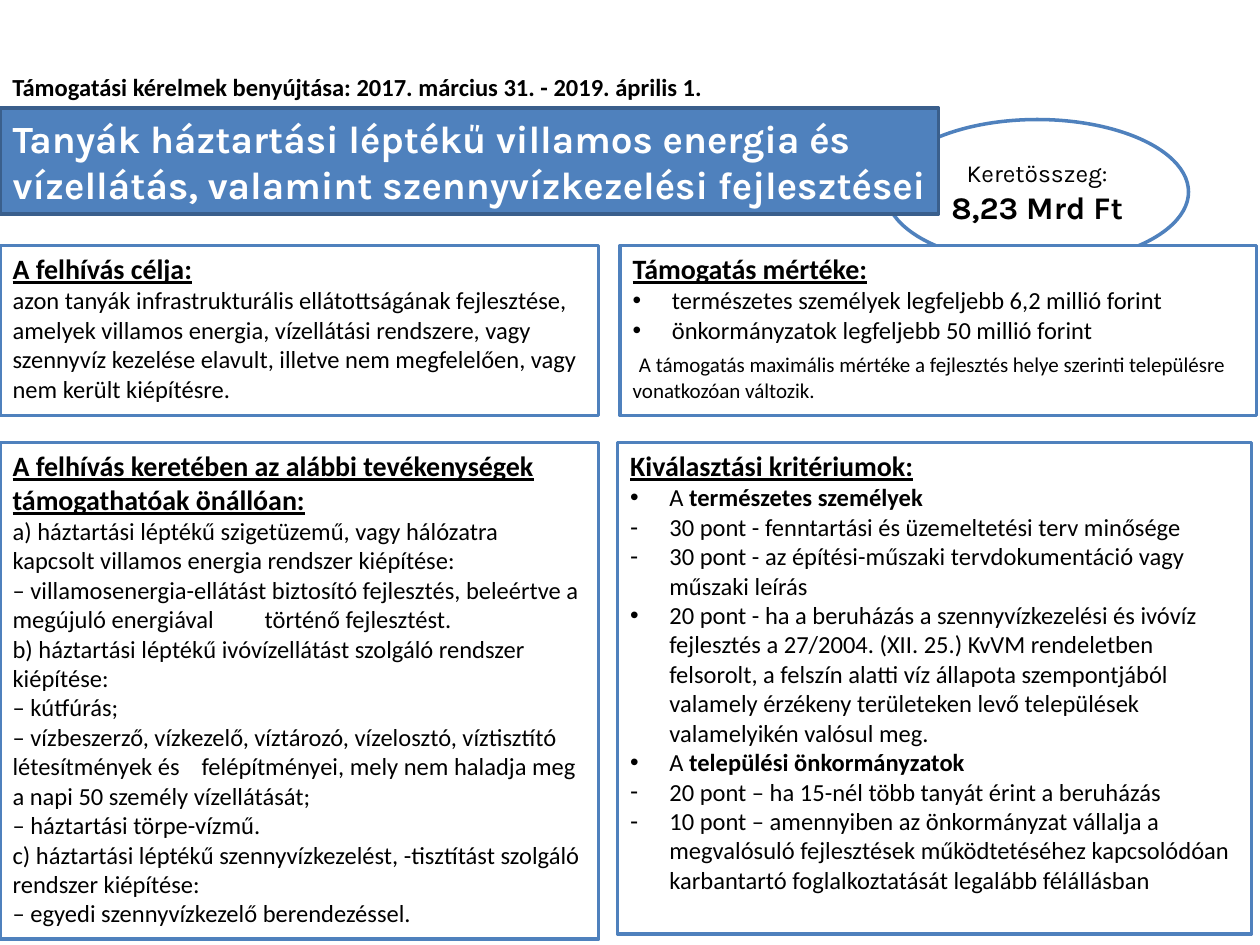
import pptx
import pptx.util
import pptx.dml.color
import pptx.enum.shapes
import pptx.enum.text
import lxml.etree

Cm, Pt = pptx.util.Cm, pptx.util.Pt
Align = pptx.enum.text.PP_ALIGN
Anchor = pptx.enum.text.MSO_ANCHOR
hues = {"blue": "4F81BD", "navy": "3A5F8C", "white": "FFFFFF", "black": "000000"}


def style(run, size, bold=False, face="Calibri", hue="black", under=False):
    font = run.font
    font.size, font.bold, font.name, font.underline = Pt(size), bold, face, under
    font.color.rgb = pptx.dml.color.RGBColor.from_string(hues[hue])


def frame(shape, box, anchor, fill="white", line="blue"):
    shape.left, shape.top, shape.width, shape.height = [Cm(n) for n in box]
    shape.fill.solid()
    shape.fill.fore_color.rgb = pptx.dml.color.RGBColor.from_string(hues[fill])
    shape.line.color.rgb = pptx.dml.color.RGBColor.from_string(hues[line])
    shape.line.width = Pt(2)
    text = shape.text_frame
    text.word_wrap = True
    text.auto_size = pptx.enum.text.MSO_AUTO_SIZE.NONE
    text.vertical_anchor = anchor
    return text


deck = pptx.Presentation()
deck.slide_width, deck.slide_height = Cm(25.4), Cm(19.05)
slide = deck.slides.add_slide(deck.slide_layouts.get_by_name("Comparison"))
shapes = slide.shapes

title = shapes.title
text = frame(title, (0, 2.18, 18.92, 2.13), Anchor.MIDDLE, "blue", "navy")
text.text = ("Tanyák háztartási léptékű villamos energia és vízellátás, "
             "valamint szennyvízkezelési fejlesztései")
text.paragraphs[0].alignment = Align.LEFT
style(text.paragraphs[0].runs[0], 22, True, "Karla", "white")

oval = shapes.add_shape(pptx.enum.shapes.MSO_SHAPE.OVAL, 0, 0, Cm(1), Cm(1))
oval.shadow.inherit = False
text = frame(oval, (17.86, 2.41, 6.1, 2.92), Anchor.MIDDLE)
text.text = "Keretösszeg:\n8,23 Mrd Ft"
for par, size, bold in zip(text.paragraphs, (14, 18), (False, True)):
    par.alignment = Align.CENTER
    style(par.runs[0], size, bold, "Karla")
title.element.addprevious(oval.element)

dates = shapes.add_textbox(0, Cm(1.32), Cm(16.84), Cm(0.86)).text_frame
dates.word_wrap = True
dates.text = "Támogatási kérelmek benyújtása: 2017. március 31. - 2019. április 1."
style(dates.paragraphs[0].runs[0], 14, True)

# Each row: bullet, then runs of (text, size, bold)
panels = [
    (1, (0, 4.95, 12.07, 3.43), "A felhívás célja:", [
        ("", [("azon tanyák infrastrukturális ellátottságának fejlesztése, amelyek "
               "villamos energia, vízellátási rendszere, vagy szennyvíz kezelése elavult, "
               "illetve nem megfelelően, vagy nem került kiépítésre.", 14, False)]),
    ]),
    (3, (12.5, 4.95, 12.83, 3.43), "Támogatás mértéke:", [
        ("•", [("természetes személyek legfeljebb 6,2 millió forint", 14, False)]),
        ("•", [("önkormányzatok legfeljebb 50 millió forint", 14, False)]),
        ("", [(" ", 16, False),
              ("A támogatás maximális mértéke a fejlesztés helye szerinti településre "
               "vonatkozóan változik.", 12, False)]),
    ]),
    (2, (0, 8.92, 12.07, 10.01),
     "A felhívás keretében az alábbi tevékenységek támogathatóak önállóan:",
     [("", [(line, 14, False)]) for line in (
         "a) háztartási léptékű szigetüzemű, vagy hálózatra kapcsolt villamos energia "
         "rendszer kiépítése:",
         "– villamosenergia-ellátást biztosító fejlesztés, beleértve a megújuló "
         "energiával \ttörténő fejlesztést.",
         "b) háztartási léptékű ivóvízellátást szolgáló rendszer kiépítése:",
         "– kútfúrás;",
         "– vízbeszerző, vízkezelő, víztározó, vízelosztó, víztisztító létesítmények és "
         "\tfelépítményei, mely nem haladja meg a napi 50 személy vízellátását;",
         "– háztartási törpe-vízmű.",
         "c) háztartási léptékű szennyvízkezelést, -tisztítást szolgáló rendszer kiépítése:",
         "– egyedi szennyvízkezelő berendezéssel.")]),
    (4, (12.45, 8.92, 12.78, 9.91), "Kiválasztási kritériumok:", [
        ("•", [("A ", 14, False), ("természetes személyek", 14, True)]),
        ("-", [("30 pont - fenntartási és üzemeltetési terv minősége", 14, False)]),
        ("-", [("30 pont - az építési-műszaki tervdokumentáció vagy műszaki leírás",
                14, False)]),
        ("•", [("20 pont - ha a beruházás a szennyvízkezelési és ivóvíz fejlesztés a "
                "27/2004. (XII. 25.) KvVM rendeletben felsorolt, a felszín alatti víz "
                "állapota szempontjából valamely érzékeny területeken levő települések "
                "valamelyikén valósul meg.", 14, False)]),
        ("•", [("A ", 14, False), ("települési önkormányzatok", 14, True)]),
        ("-", [("20 pont – ha 15-nél több tanyát érint a beruházás", 14, False)]),
        ("-", [("10 pont – amennyiben az önkormányzat vállalja a megvalósuló fejlesztések "
                "működtetéséhez kapcsolódóan karbantartó foglalkoztatását legalább "
                "félállásban", 14, False)]),
    ]),
]

space = "{http://schemas.openxmlformats.org/drawingml/2006/main}"
for slot, box, head, rows in panels:
    text = frame(slide.placeholders[slot], box, Anchor.TOP)
    for num, (mark, parts) in enumerate([("", [(head, 16, True)])] + rows):
        par = text.add_paragraph() if num else text.paragraphs[0]
        props = par._p.get_or_add_pPr()
        dent = Cm(0.79) if mark else 0
        props.set("marL", str(dent))
        props.set("indent", str(-dent))
        if mark:
            lxml.etree.SubElement(props, space + "buFont", typeface="Arial")
            lxml.etree.SubElement(props, space + "buChar", char=mark)
        else:
            lxml.etree.SubElement(props, space + "buNone")
        par.space_before = Pt(0)
        for words, size, bold in parts:
            run = par.add_run()
            run.text = words
            style(run, size, bold, under=num == 0)

deck.save("out.pptx")
